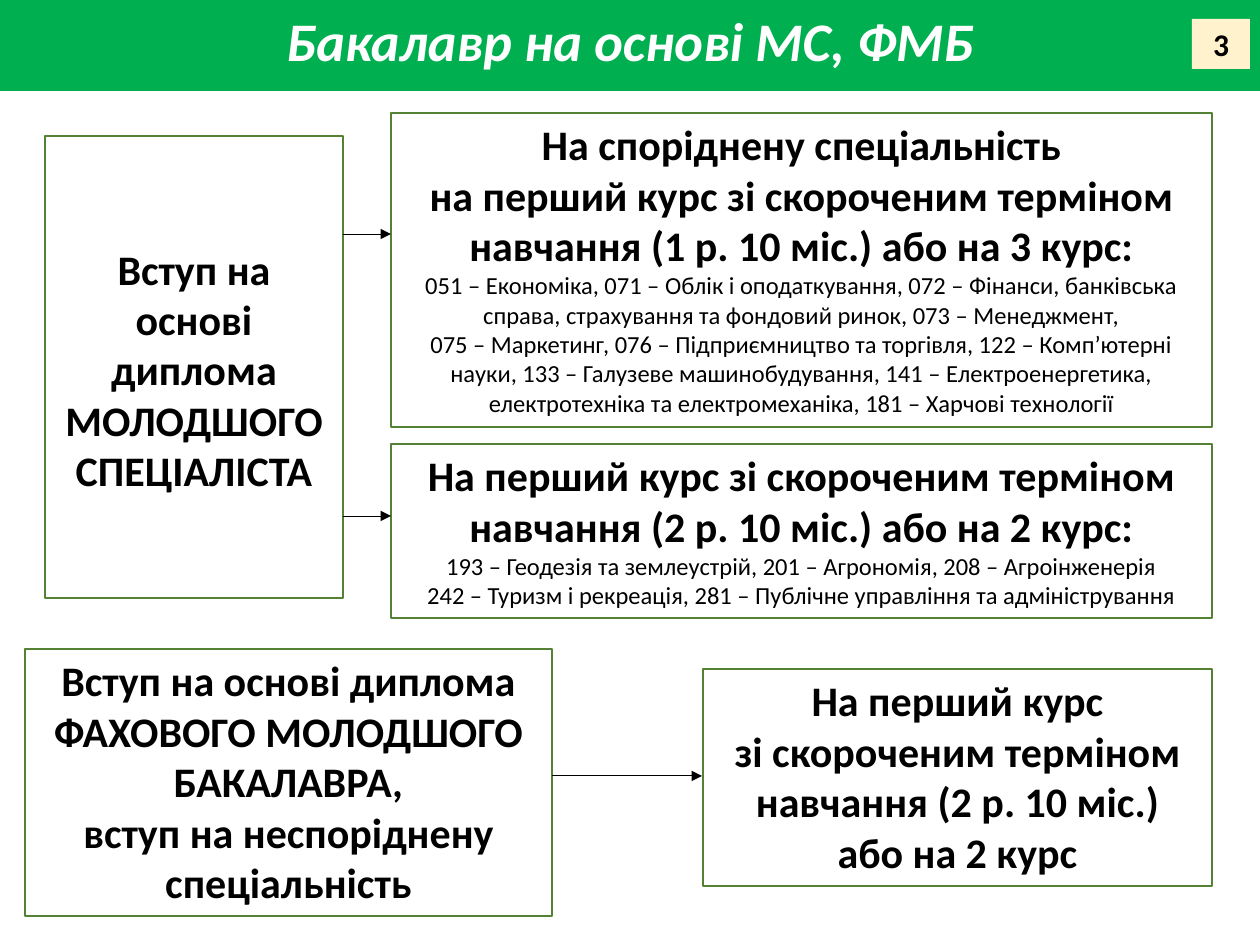
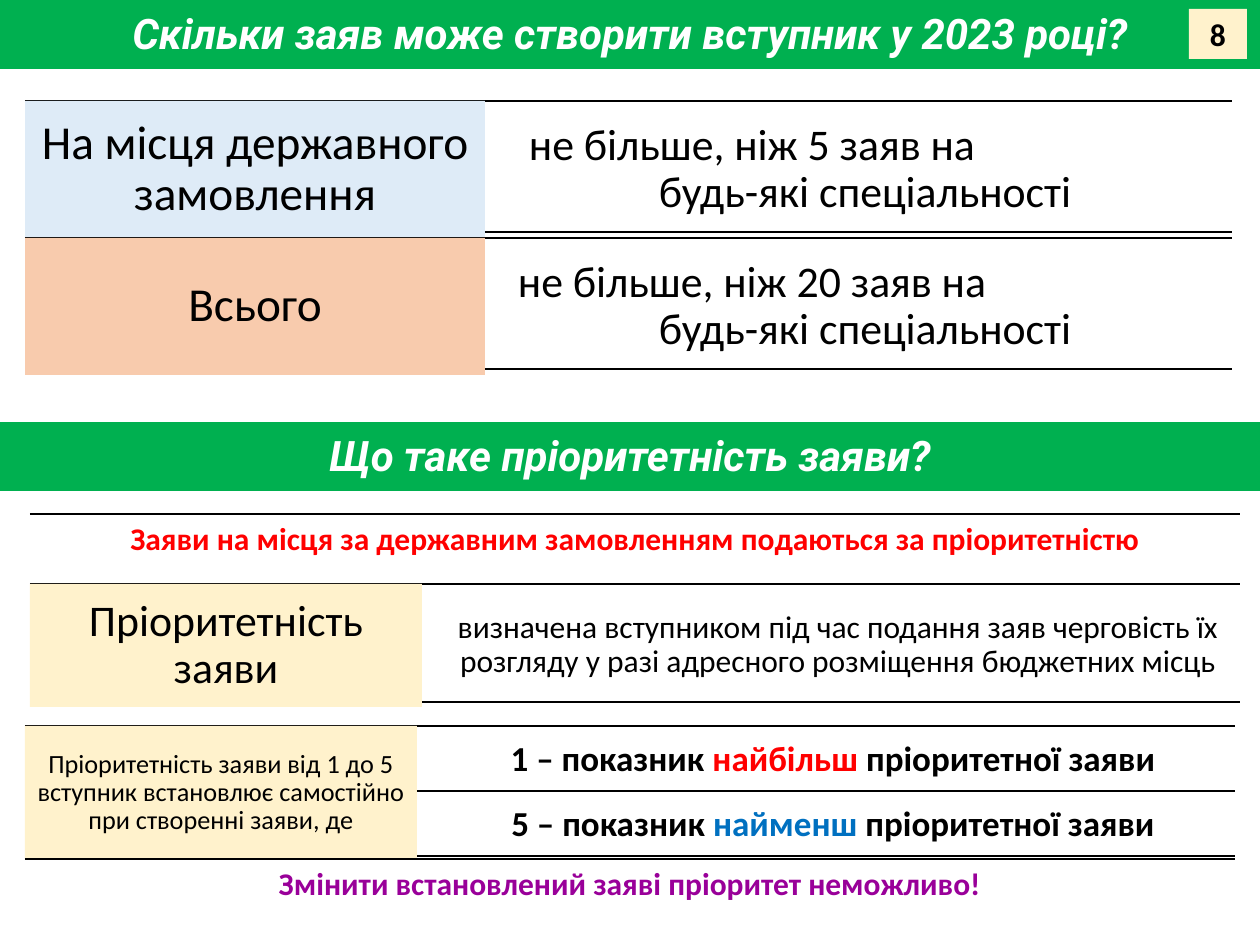
from dataclasses import dataclass

from lxml import etree
from pptx import Presentation
from pptx.dml.color import RGBColor as RGB
from pptx.enum.shapes import MSO_CONNECTOR as CONN, MSO_SHAPE as SHAPE
from pptx.enum.text import MSO_ANCHOR as ANCHOR, MSO_AUTO_SIZE as AUTO, PP_ALIGN as ALIGN
from pptx.oxml.ns import qn
from pptx.util import Emu, Pt

PX = 914400 // 126  # one px in EMU


@dataclass(frozen=True)
class Theme:
    # colours
    band: str = "00B050"
    white: str = "FFFFFF"
    text: str = "000000"
    cream: str = "FFF2CC"
    blue_tint: str = "DEEBF7"
    orange_tint: str = "F8CBAD"
    outline: str = "548235"
    red: str = "FF0000"
    blue: str = "0070C0"
    purple: str = "990099"
    # fonts and sizes
    font: str = "Calibri"
    band_font: str = "Roboto"
    title: int = 31
    heading: int = 24
    list: int = 14
    term: int = 27
    detail: int = 25
    note: int = 18
    scale: int = 20
    hint: int = 15


T = Theme()


@dataclass
class Para:
    runs: object  # a string, or (text, colour) pairs
    size: int
    bold: bool = False
    italic: bool = False
    color: str = T.text
    font: str = T.font
    spacing: float = 0.9
    left: int = None  # left margin in px, None for centred text


def px(*lengths):
    return [Emu(round(n * PX)) for n in lengths]


def fill_text(sp, paras, inset=(13, 6), anchor=ANCHOR.MIDDLE, top=None):
    """Write paragraphs into a shape; inset is (sides, top and bottom)."""
    tf = sp.text_frame
    tf.word_wrap, tf.auto_size, tf.vertical_anchor = True, AUTO.NONE, anchor
    side, end = px(*inset)
    tf.margin_left = tf.margin_right = side
    tf.margin_top = tf.margin_bottom = end
    if top is not None:
        tf.margin_top = px(top)[0]
    for i, para in enumerate(paras):
        p = tf.add_paragraph() if i else tf.paragraphs[0]
        p.alignment = ALIGN.CENTER if para.left is None else ALIGN.LEFT
        p.line_spacing, p.space_before, p.space_after = para.spacing, Pt(0), Pt(0)
        if para.left is not None:
            p._p.get_or_add_pPr().set("marL", str(para.left * PX))
        f = p.font
        f.name, f.size, f.bold, f.italic = para.font, Pt(para.size), para.bold, para.italic
        f.color.rgb = RGB.from_string(para.color)
        runs = [(para.runs, None)] if isinstance(para.runs, str) else para.runs
        for text, color in runs:
            r = p.add_run()
            r.text = text
            if color:
                r.font.color.rgb = RGB.from_string(color)


def add_box(slide, box, paras, fill=None, line=None, **text_options):
    sp = slide.shapes.add_shape(SHAPE.RECTANGLE, *px(*box))
    sp.shadow.inherit = False
    if fill:
        sp.fill.solid()
        sp.fill.fore_color.rgb = RGB.from_string(fill)
    else:
        sp.fill.background()
    if line:
        sp.line.color.rgb = RGB.from_string(line)
        sp.line.width = Pt(0.75)
    else:
        sp.line.fill.background()
    fill_text(sp, paras, **text_options)


def add_line(slide, x1, x2, y, width=1, arrow=False):
    """Draw a horizontal rule or arrow."""
    c = slide.shapes.add_connector(CONN.STRAIGHT, *px(x1, y, x2, y))
    c.line.color.rgb = RGB.from_string(T.text)
    c.line.width = Pt(width)
    if arrow:
        etree.SubElement(c.line._get_or_add_ln(), qn("a:tailEnd"), type="triangle")
    etree.SubElement(c._element.spPr, qn("a:effectLst"))


def band_para(text, size=T.heading, font=T.band_font):
    return Para(text, size, bold=True, italic=True, color=T.white, font=font)


def add_title(slide, box, para, inset):
    sp = slide.shapes.title
    sp.left, sp.top, sp.width, sp.height = px(*box)
    sp.fill.solid()
    sp.fill.fore_color.rgb = RGB.from_string(T.band)
    fill_text(sp, [para], inset=(inset, inset), anchor=ANCHOR.TOP)


def add_number(slide, x, y, number):
    add_box(slide, (x, y, 58, 50), [Para(number, T.note, bold=True, spacing=1)], fill=T.cream)


# Slide with admission routes
def add_route_box(slide, box, headings, specialities=(), top=None):
    paras = [Para(h, T.heading, bold=True, spacing=1) for h in headings]
    paras += [Para(s, T.list, spacing=1) for s in specialities]
    add_box(slide, box, paras, line=T.outline, anchor=ANCHOR.TOP, top=top)


def build_routes(prs):
    slide = prs.slides.add_slide(prs.slide_layouts[5])
    add_title(slide, (0, -1, 1260, 92),
              band_para("Бакалавр на основі МС, ФМБ", T.title, T.font), 16)
    add_number(slide, 1192, 19, "3")

    # Junior specialist diploma
    add_route_box(slide, (45, 136, 298, 462),
                  ["Вступ на основі диплома МОЛОДШОГО СПЕЦІАЛІСТА"], top=107)
    add_route_box(
        slide, (391, 113, 821, 314),
        ["На споріднену спеціальність",
         "на перший курс зі скороченим терміном навчання (1 р. 10 міс.) або на 3 курс:"],
        ["051 – Економіка, 071 – Облік і оподаткування, 072 – Фінанси, банківська "
         "справа, страхування та фондовий ринок, 073 – Менеджмент,",
         "075 – Маркетинг, 076 – Підприємництво та торгівля, 122 – Комп’ютерні науки, "
         "133 – Галузеве машинобудування, 141 – Електроенергетика, "
         "електротехніка та електромеханіка, 181 – Харчові технології"])
    add_route_box(
        slide, (391, 444, 821, 174),
        ["На перший курс зі скороченим терміном навчання (2 р. 10 міс.) або на 2 курс:"],
        ["193 – Геодезія та землеустрій, 201 – Агрономія, 208 – Агроінженерія",
         "242 – Туризм і рекреація, 281 – Публічне управління та адміністрування"])

    # Professional junior bachelor diploma
    add_route_box(slide, (25, 649, 527, 267),
                  ["Вступ на основі диплома ФАХОВОГО МОЛОДШОГО БАКАЛАВРА,",
                   "вступ на неспоріднену спеціальність"])
    add_route_box(slide, (703, 669, 509, 217),
                  ["На перший курс", "зі скороченим терміном навчання (2 р. 10 міс.)",
                   "або на 2 курс"])

    for x1, x2, y in ((343, 391, 234), (343, 391, 516), (552, 702, 776)):
        add_line(slide, x1, x2, y, width=0.5, arrow=True)


# Slide with numbers and priorities of applications
def add_term_row(slide, box, term_w, gap, term, fill, details, term_inset, inset):
    """A filled term on the left, ruled details stacked on the right."""
    x, y, w, h = box
    step = (h - gap) // len(details)
    split = x + term_w
    add_line(slide, x, x + w, y)
    add_box(slide, (x, y, term_w, h), [term], fill=fill, inset=(term_inset, term_inset))
    for i, paras in enumerate(details):
        top = y + i * step
        add_box(slide, (split + 14, top + gap, w - term_w - 14, step - gap), paras,
                inset=(inset, inset))
        add_line(slide, split, x + w, top + step)


def add_statement(slide, x, y, text, color):
    add_line(slide, x, x + 1210, y)
    add_box(slide, (x, y, 1210, 55), [Para(text, T.note, bold=True, color=color)],
            inset=(9, 9), anchor=ANCHOR.TOP)


def priority_para(number, word, color):
    runs = [(f"{number} – показник ", None), (word, color), (" пріоритетної заяви", None)]
    return Para(runs, T.scale, bold=True)


def build_applications(prs):
    slide = prs.slides.add_slide(prs.slide_layouts[5])
    add_title(slide, (0, 0, 1260, 69),
              band_para("Скільки заяв може створити вступник у 2023 році?"), 13)

    # Limits on the number of applications
    limits = (("На місця державного замовлення", T.blue_tint, 5, 17),
              ("Всього", T.orange_tint, 20, 6))
    for i, (term, fill, count, left) in enumerate(limits):
        limit = [Para(f"не більше, ніж {count} заяв на", T.detail, left=left),
                 Para("будь-які спеціальності", T.detail, left=147)]
        add_term_row(slide, (25, 101 + i * 137, 1207, 137), 460, 6,
                     Para(term, T.term), fill, [limit], 14, 13)

    # Priority of applications
    add_box(slide, (0, 422, 1260, 69), [band_para("Що таке пріоритетність заяви?")],
            fill=T.band, inset=(13, 13), anchor=ANCHOR.TOP)
    add_statement(slide, 30, 514,
                  "Заяви на місця за державним замовленням подаються за пріоритетністю", T.red)
    add_term_row(slide, (30, 584, 1210, 123), 392, 5,
                 Para("Пріоритетність заяви", T.detail), T.cream,
                 [[Para("визначена вступником під час подання заяв черговість їх розгляду "
                        "у разі адресного розміщення бюджетних місць", T.note)]], 13, 9)
    add_term_row(slide, (25, 726, 1210, 134), 392, 3,
                 Para("Пріоритетність заяви від 1 до 5 вступник встановлює самостійно "
                      "при створенні заяви, де", T.hint), T.cream,
                 [[priority_para(1, "найбільш", T.red)],
                  [priority_para(5, "найменш", T.blue)]], 8, 10)
    add_statement(slide, 25, 859,
                  "Змінити встановлений заяві пріоритет неможливо!", T.purple)
    add_number(slide, 1189, 9, "8")


def main():
    prs = Presentation()
    prs.slide_width, prs.slide_height = px(1260, 945)
    build_routes(prs)
    build_applications(prs)
    prs.save("out.pptx")


if __name__ == "__main__":
    main()
